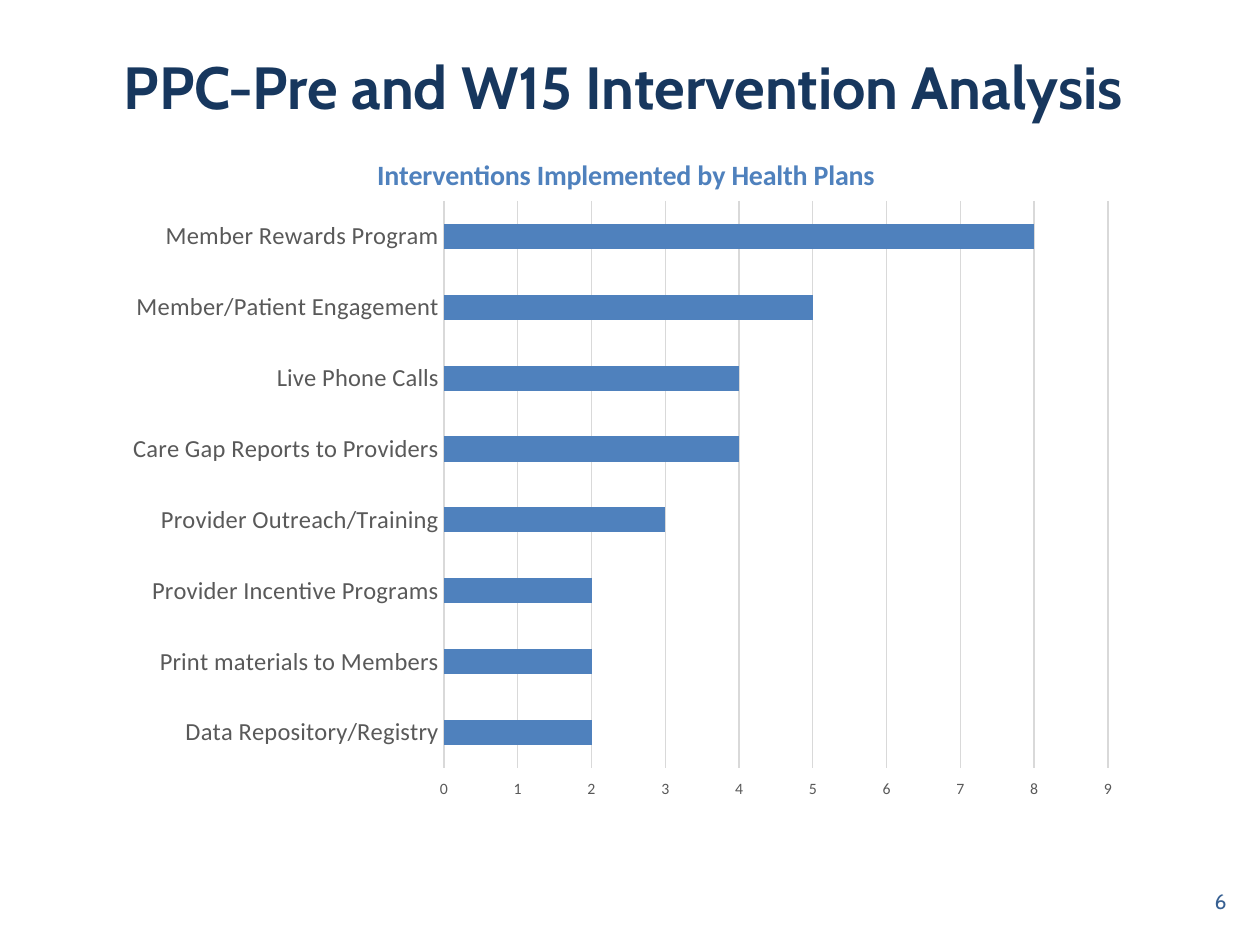
import pptx
import pptx.chart.data
import pptx.dml.color
import pptx.enum.chart
import pptx.enum.text
import pptx.oxml
import pptx.oxml.ns
import pptx.util
from dataclasses import dataclass

SCALE = 914400 / 126


@dataclass(frozen=True)
class Theme:
    """Colours, fonts and type sizes of the slide."""
    navy: str = "17375E"
    blue: str = "376092"
    bar: str = "4F81BD"
    gray: str = "595959"
    grid: str = "D9D9D9"
    black: str = "000000"
    head: str = "Cabin"
    body: str = "Calibri"
    title: int = 34
    sub: int = 16
    label: int = 14
    page: int = 12
    base: int = 10
    tick: int = 9


THEME = Theme()
DATA = {
    "Member Rewards Program": 8,
    "Member/Patient Engagement": 5,
    "Live Phone Calls": 4,
    "Care Gap Reports to Providers": 4,
    "Provider Outreach/Training": 3,
    "Provider Incentive Programs": 2,
    "Print materials to Members": 2,
    "Data Repository/Registry": 2,
}


def px(num):
    """Turn pixels into EMU."""
    return pptx.util.Emu(round(num * SCALE))


def tint(hue):
    """Turn a hex string into a colour."""
    return pptx.dml.color.RGBColor.from_string(hue)


def style(font, size, hue, face, bold=False):
    """Set the size, colour, face and weight of a font."""
    font.size = pptx.util.Pt(size)
    font.color.rgb = tint(hue)
    font.name = face
    font.bold = bold


def rule(line):
    """Draw a thin pale line."""
    line.color.rgb = tint(THEME.grid)
    line.width = pptx.util.Pt(0.75)


def write(shape, text, align, size, hue, bold=False):
    """Put one styled run, centred in height, into a shape."""
    frame = shape.text_frame
    frame.word_wrap = True
    frame.auto_size = pptx.enum.text.MSO_AUTO_SIZE.NONE
    frame.vertical_anchor = pptx.enum.text.MSO_ANCHOR.MIDDLE
    para = frame.paragraphs[0]
    para.alignment = align
    run = para.add_run()
    run.text = text
    style(run.font, size, hue, THEME.head, bold)


def add_title(slide, box, text):
    """Place the slide title in its placeholder."""
    title = slide.shapes.title
    title.left, title.top, title.width, title.height = map(px, box)
    write(title, text, pptx.enum.text.PP_ALIGN.CENTER,
          THEME.title, THEME.navy, True)


def add_page(slide, box, text):
    """Place the page number."""
    write(slide.shapes.add_textbox(*map(px, box)), text,
          pptx.enum.text.PP_ALIGN.RIGHT, THEME.page, THEME.blue)


def pin(part, spot, size, box, inner=False):
    """Fix a chart part at a pixel box inside a chart of a given size."""
    for old in part.findall(pptx.oxml.ns.qn("c:layout")):
        part.remove(old)
    goal = '<c:layoutTarget val="inner"/>' if inner else ""
    rates = "".join(f'<c:{key} val="{val / full}"/>'
                    for key, val, full in zip("xywh", box, size * 2))
    part.insert(spot, pptx.oxml.parse_xml(
        f'<c:layout {pptx.oxml.ns.nsdecls("c")}><c:manualLayout>{goal}'
        f'<c:xMode val="edge"/><c:yMode val="edge"/>{rates}'
        '</c:manualLayout></c:layout>'))


def add_bars(slide, box, text, data):
    """Place the bar chart with its title and axes."""
    enum = pptx.enum.chart
    feed = pptx.chart.data.CategoryChartData()
    feed.categories = list(data)
    feed.add_series("Series 1", list(data.values()))
    chart = slide.shapes.add_chart(
        enum.XL_CHART_TYPE.BAR_CLUSTERED, *map(px, box), feed).chart
    style(chart.font, THEME.base, THEME.black, THEME.body)
    chart.has_legend = False
    chart.has_title = True
    run = chart.chart_title.text_frame.paragraphs[0].add_run()
    run.text = text
    style(run.font, THEME.sub, THEME.bar, THEME.body, True)
    chart.chart_title.include_in_layout = False
    size = box[2:]
    pin(chart.chart_title.element, 1, size, (294, 15))
    area = chart.element.find(".//" + pptx.oxml.ns.qn("c:plotArea"))
    pin(area, 0, size, (366, 65, 664, 567), True)

    plot = chart.plots[0]
    plot.gap_width = 182
    plot.vary_by_categories = False
    fill = plot.series[0].format.fill
    fill.solid()
    fill.fore_color.rgb = tint(THEME.bar)

    cats, vals = chart.category_axis, chart.value_axis
    for axis, points in ((cats, THEME.label), (vals, THEME.tick)):
        axis.major_tick_mark = enum.XL_TICK_MARK.NONE
        axis.minor_tick_mark = enum.XL_TICK_MARK.NONE
        style(axis.tick_labels.font, points, THEME.gray, THEME.body)
    cats.reverse_order = True
    rule(cats.format.line)
    vals.tick_label_position = enum.XL_TICK_LABEL_POSITION.HIGH
    vals.minimum_scale, vals.maximum_scale, vals.major_unit = 0, 9, 1
    vals.format.line.fill.background()
    vals.has_major_gridlines = True
    rule(vals.major_gridlines.format.line)


def main():
    """Build and save the slide."""
    deck = pptx.Presentation()
    deck.slide_width, deck.slide_height = px(1260), px(945)
    slide = deck.slides.add_slide(deck.slide_layouts[5])
    add_title(slide, (30, 21, 1187, 129),
              "PPC-Pre and W15 Intervention Analysis")
    add_page(slide, (945, 876, 294, 50), "6")
    add_bars(slide, (78, 136, 1092, 672),
             "Interventions Implemented by Health Plans", DATA)
    deck.save("out.pptx")


if __name__ == "__main__":
    main()
